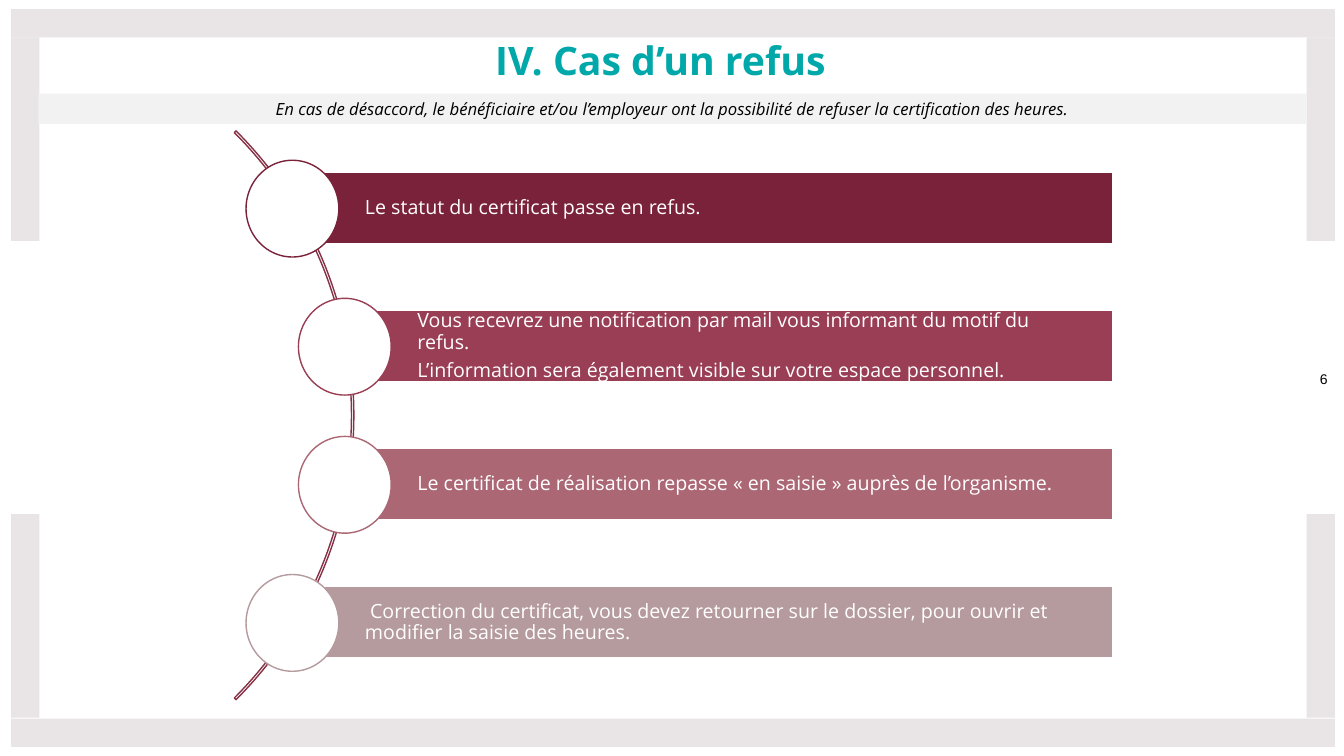
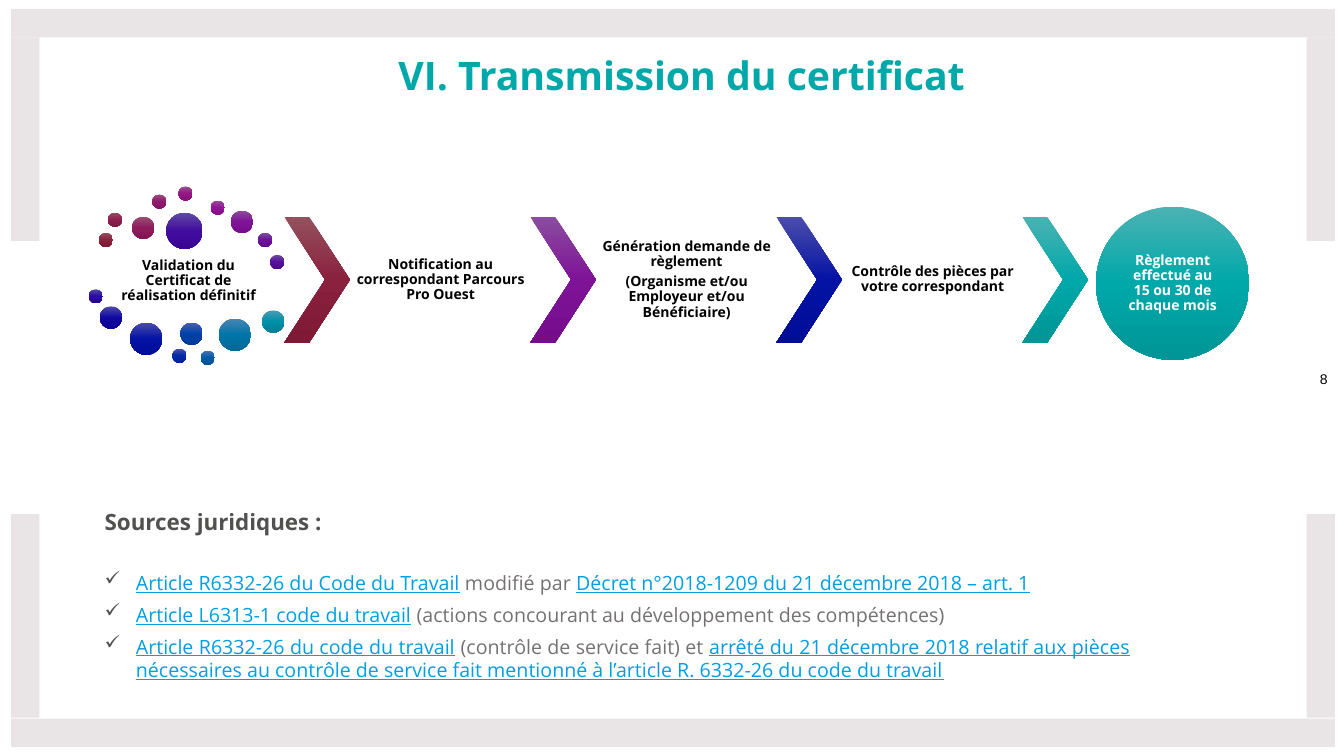
"""Build two training slides: refusal of a certificate and its transmission."""
import copy

from lxml import etree
from pptx import Presentation
from pptx import util as u
from pptx.dml.color import RGBColor
from pptx.enum import shapes, text
from pptx.oxml.ns import qn

FONT = "Open Sans"
COLOURS = {
    "frame": "E9E4E5",
    "title": "00A8A9",
    "band": "F2F2F2",
    "arc": "873146",
    "white": "FFFFFF",
    "black": "000000",
    "heading": "515250",
    "link": "009EE2",
    "plain": "767171",
}
GRADIENTS = [
    "94515E 8A213E 7F1935", "965067 8C1F4D 811744", "984F72 8E1D5E 831554",
    "994F80 901A70 851366", "9B4E8F 931884 871079", "9A4E9D 911695 860E89",
    "8B4D9F 7F1397 750C8C", "7D4DA1 6C1199 620A8E", "6E4CA3 570F9C 4E0790",
    "604CA4 420C9E 390592", "544CA6 2A0AA0 220394", "4D4CA8 1208A2 0A0196",
    "4B4DAA 0513A4 000D97", "4B54AC 032AA7 002497", "4B60AE 0142A9 003B97",
    "4B71B0 005CA9 005196", "4B85B1 0075A9 006896", "4B9BB3 008FA9 007F96",
    "4BB2B3 00A8A9 009596",
]


def add_box(slide, place, fill=None, line=None, kind=shapes.MSO_SHAPE.RECTANGLE):
    """Add a preset shape, or a text box when there is no fill; three colours make a gradient."""
    place = [u.Inches(length) for length in place]
    if fill is None:
        return slide.shapes.add_textbox(*place)
    shape = slide.shapes.add_shape(kind, *place)
    shape.shadow.inherit = False
    tones = fill.split()
    if len(tones) == 1:
        shape.fill.solid()
        shape.fill.fore_color.rgb = RGBColor.from_string(fill)
    else:
        shape.fill.gradient()
        shape.fill.gradient_angle = 270
        stop_list = shape.fill._xPr.find(".//" + qn("a:gsLst"))
        stop_list.append(copy.deepcopy(stop_list[0]))
        for stop, position, tone in zip(shape.fill.gradient_stops, (0, 0.5, 1), tones):
            stop.position = position
            stop.color.rgb = RGBColor.from_string(tone)
    if line:
        shape.line.color.rgb = RGBColor.from_string(line)
        shape.line.width = u.Pt(1)
    else:
        shape.line.fill.background()
    return shape


def write(shape, words, size, colour, bold=False, italic=False, font=FONT, spacing=0.9,
          after=0, margins=(0, 0, 0, 0), align=text.PP_ALIGN.CENTER,
          anchor=text.MSO_ANCHOR.MIDDLE):
    """Fill a shape with uniformly formatted paragraphs."""
    frame = shape.text_frame
    frame.text = words
    frame.word_wrap = True
    frame.vertical_anchor = anchor
    frame.margin_left, frame.margin_top, frame.margin_right, frame.margin_bottom = (
        u.Inches(margin) for margin in margins)
    for paragraph in frame.paragraphs:
        paragraph.alignment = align
        paragraph.line_spacing = spacing
        paragraph.space_after = u.Pt(after)
        for run in paragraph.runs:
            run.font.name = font
            run.font.size = u.Pt(size)
            run.font.bold = bold
            run.font.italic = italic
            run.font.color.rgb = RGBColor.from_string(COLOURS[colour])
    return frame


presentation = Presentation()
presentation.slide_width = u.Inches(13.33)
presentation.slide_height = u.Inches(7.5)

pages = [
    ("IV. Cas d’un refus", (0.28, 0.41, 12.54, 0.6), "6"),
    ("VI. Transmission du certificat", (0.16, 0.56, 13.2, 0.6), "8"),
]
for title, title_place, number in pages:
    slide = presentation.slides.add_slide(presentation.slide_layouts[6])
    for top in (0.09, 7.13):
        add_box(slide, (0.11, top, 13.13, 0.28), COLOURS["frame"])
    for left in (0.11, 12.96):
        for top in (0.37, 5.1):
            add_box(slide, (left, top, 0.28, 2.02), COLOURS["frame"])
    write(add_box(slide, title_place), title, 28, "title", bold=True,
          anchor=text.MSO_ANCHOR.TOP)
    write(add_box(slide, (12.96, 2.51, 0.34, 2.49)), number, 10, "black",
          font="Arial", spacing=1)
refusal, transmission = presentation.slides

band = add_box(refusal, (0.38, 0.93, 12.58, 0.3), COLOURS["band"])
write(band, "En cas de désaccord, le bénéficiaire et/ou l’employeur ont la possibilité "
      "de refuser la certification des heures.", 12, "black", italic=True, spacing=1)

arc = add_box(refusal, (-4.47, 0.13, 7.98, 7.98), COLOURS["white"], COLOURS["arc"],
              shapes.MSO_SHAPE.BLOCK_ARC)
for index, value in enumerate((189, 27, 0.003)):
    arc.adjustments[index] = value

refusal_steps = [
    (2.9, "79223A", "Le statut du certificat passe en refus."),
    (3.42, "993E54", "Vous recevrez une notification par mail vous informant du motif du\v"
     "refus.\nL’information sera également visible sur votre espace personnel."),
    (3.42, "AC6775", "Le certificat de réalisation repasse « en saisie » auprès de "
     "l’organisme."),
    (2.9, "B59A9E", " Correction du certificat, vous devez retourner sur le dossier, pour "
     "ouvrir et modifier la saisie des heures."),
]
for index, (left, colour, words) in enumerate(refusal_steps):
    top = 1.71 + 1.37 * index
    bar = add_box(refusal, (left, top, 11.04 - left, 0.71), colour, COLOURS["white"])
    write(bar, words, 14, "white", after=5, margins=(0.72, 0.04, 0.04, 0.04),
          align=text.PP_ALIGN.LEFT)
    add_box(refusal, (left - 0.46, top - 0.12, 0.92, 0.96), COLOURS["white"], colour,
            shapes.MSO_SHAPE.OVAL)

dots = [
    (0.98, 2.31, 0.14), (1.07, 2.11, 0.14), (1.31, 2.15, 0.22), (1.51, 1.93, 0.14),
    (1.77, 1.85, 0.14), (2.09, 1.99, 0.14), (2.29, 2.09, 0.22), (2.56, 2.31, 0.14),
    (2.68, 2.53, 0.14), (1.65, 2.11, 0.36), (0.88, 2.87, 0.14), (0.99, 3.04, 0.22),
    (1.29, 3.2, 0.32), (1.71, 3.46, 0.14), (1.79, 3.2, 0.22), (1.99, 3.48, 0.14),
    (2.17, 3.16, 0.32), (2.6, 3.08, 0.22),
]
for (left, top, size), gradient in zip(dots, GRADIENTS):
    add_box(transmission, (left, top, size, size), gradient, kind=shapes.MSO_SHAPE.OVAL)

for index, gradient in enumerate(GRADIENTS[::6]):
    chevron = add_box(transmission, (2.82 + 2.44 * index, 2.15, 0.65, 1.25), gradient,
                      kind=shapes.MSO_SHAPE.CHEVRON)
    chevron.adjustments[0] = 0.623

transmission_steps = [
    ((1.16, 2.49, 1.42, 0.59), "Validation du Certificat de réalisation définitif"),
    ((3.48, 2.15, 1.78, 1.25), "Notification au correspondant Parcours Pro Ouest"),
    ((5.92, 2.15, 1.78, 1.25), "Génération demande de règlement\n"
     "(Organisme et/ou Employeur et/ou Bénéficiaire)"),
    ((8.36, 2.15, 1.78, 1.25), "Contrôle des pièces par votre correspondant"),
]
for place, words in transmission_steps:
    write(add_box(transmission, place), words, 10, "black", bold=True, after=3.5,
          margins=(0.01, 0.01, 0.01, 0.01))

payment = add_box(transmission, (10.87, 2.05, 1.52, 1.52), GRADIENTS[-1],
                  kind=shapes.MSO_SHAPE.OVAL)
write(payment, "Règlement effectué au\v15 ou 30 de chaque mois", 10, "white",
      bold=True, after=3.5)

sources = write(add_box(transmission, (0.94, 4.99, 10.37, 1.83)), "Sources juridiques :",
                16, "heading", bold=True, spacing=1, margins=(0.1, 0.05, 0.1, 0.05),
                align=text.PP_ALIGN.LEFT, anchor=text.MSO_ANCHOR.TOP)
references = [
    ("Article R6332-26 du Code du Travail", " modifié par ",
     "Décret n°2018-1209 du 21 décembre 2018 – art. 1"),
    ("Article L6313-1 code du travail",
     " (actions concourant au développement des compétences)"),
    ("Article R6332-26 du code du travail", " (contrôle de service fait) et ",
     "arrêté du 21 décembre 2018 relatif aux pièces nécessaires au contrôle de service "
     "fait mentionné à l’article R. 6332-26 du code du travail"),
]
for index, parts in enumerate(references):
    paragraph = sources.add_paragraph()
    properties = paragraph._p.get_or_add_pPr()
    properties.set("marL", str(u.Inches(0.31)))
    properties.set("indent", str(-u.Inches(0.31)))
    bullet_colour = etree.SubElement(properties, qn("a:buClr"))
    etree.SubElement(bullet_colour, qn("a:srgbClr"), val=COLOURS["heading"])
    etree.SubElement(properties, qn("a:buChar"), char="✓")
    paragraph.alignment = text.PP_ALIGN.JUSTIFY
    paragraph.space_before = u.Pt(6 if index else 25.5)
    for position, part in enumerate(parts):
        is_link = position % 2 == 0
        run = paragraph.add_run()
        run.text = part
        run.font.name = FONT
        run.font.size = u.Pt(14)
        run.font.underline = is_link
        run.font.color.rgb = RGBColor.from_string(COLOURS["link" if is_link else "plain"])

presentation.save("out.pptx")
